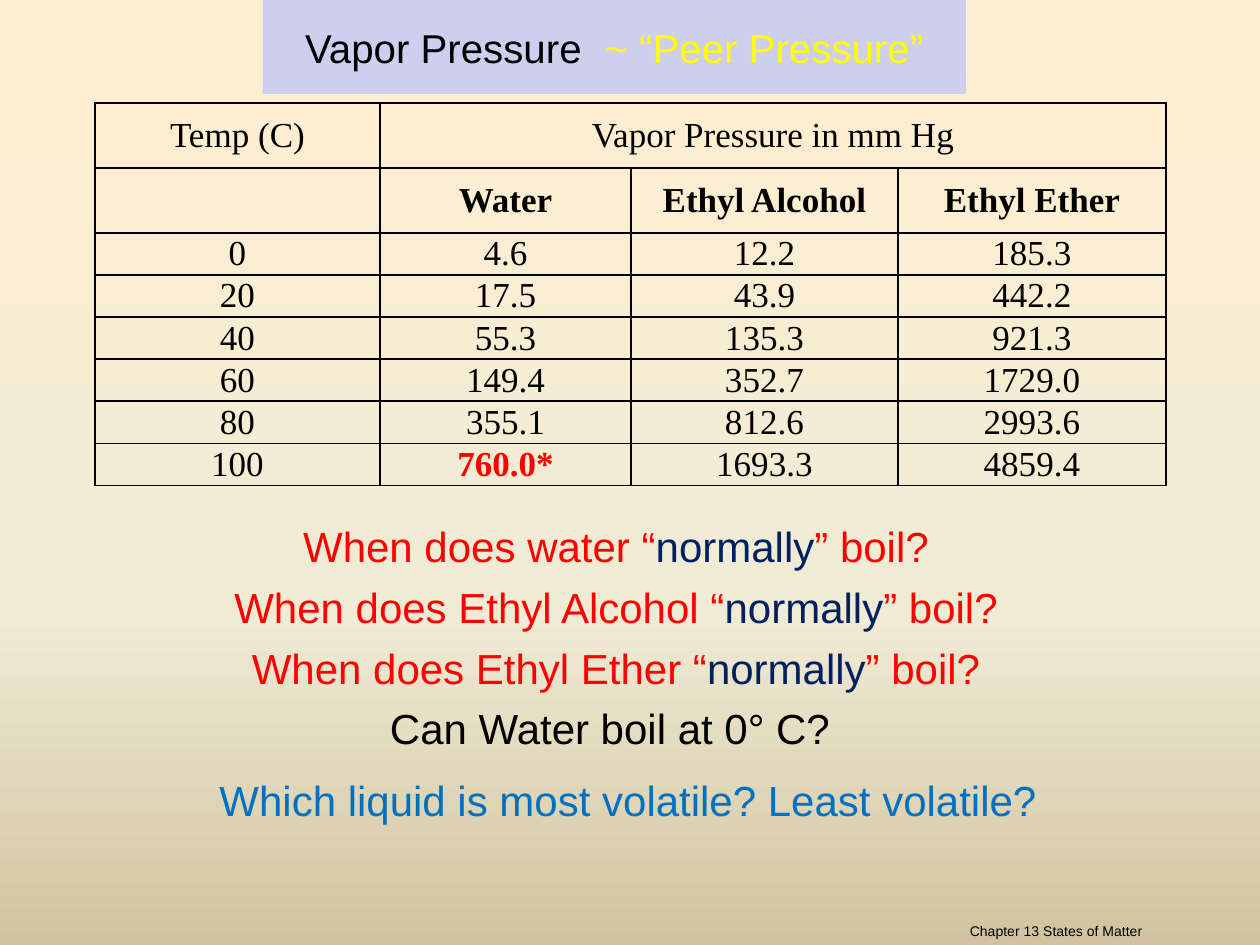
from copy import deepcopy
from lxml import etree
from pptx import Presentation
from pptx.dml.color import RGBColor
from pptx.enum.shapes import MSO_SHAPE
from pptx.enum.text import MSO_ANCHOR, PP_ALIGN
from pptx.oxml.ns import qn
from pptx.util import Emu, Pt

RECT = MSO_SHAPE.RECTANGLE
TOP, MID, LOW = MSO_ANCHOR.TOP, MSO_ANCHOR.MIDDLE, MSO_ANCHOR.BOTTOM
CENTER, RIGHT = PP_ALIGN.CENTER, PP_ALIGN.RIGHT
BLACK = RGBColor(0, 0, 0)
RED = RGBColor(0xFF, 0, 0)
NAVY = RGBColor(0, 0x20, 0x60)
BLUE = RGBColor(0, 0x70, 0xC0)
YELLOW = RGBColor(0xFF, 0xFF, 0)
LILAC = RGBColor(0xCE, 0xCE, 0xEF)
STOPS = [
    (0, RGBColor(0xFF, 0xEF, 0xD1)),
    (0.65, RGBColor(0xF0, 0xEB, 0xD5)),
    (1, RGBColor(0xD1, 0xC3, 0x9F)),
]
SANS, SERIF = "Arial", "Times New Roman"

COLS = [285, 251, 267, 268]
HEADS = [
    ["Temp (C)", "Vapor Pressure in mm Hg", "", ""],
    ["", "Water", "Ethyl Alcohol", "Ethyl Ether"],
]
DATA = [
    ["0", "4.6", "12.2", "185.3"],
    ["20", "17.5", "43.9", "442.2"],
    ["40", "55.3", "135.3", "921.3"],
    ["60", "149.4", "352.7", "1729.0"],
    ["80", "355.1", "812.6", "2993.6"],
    ["100", "760.0*", "1693.3", "4859.4"],
]
LIQUIDS = ["water", "Ethyl Alcohol", "Ethyl Ether"]


def px(n):
    return Emu(round(n * 914400 / 126))


def add_run(para, text, size, color, font=SANS, bold=False):
    run = para.add_run()
    run.text = text
    run.font.size = Pt(size)
    run.font.name = font
    run.font.bold = bold
    run.font.color.rgb = color


def add_box(slide, box, anchor):
    frame = slide.shapes.add_textbox(*map(px, box)).text_frame
    frame.word_wrap = True
    frame.vertical_anchor = anchor
    return frame


def paint_back(slide):
    fill = slide.background.fill
    fill.gradient()
    fill.gradient_angle = 270
    stops = fill.gradient_stops
    items = stops[0]._gs.getparent()
    items.append(deepcopy(items[-1]))
    for stop, (place, color) in zip(fill.gradient_stops, STOPS):
        stop.position = place
        stop.color.rgb = color


def add_title(slide, box):
    shape = slide.shapes.add_shape(RECT, *map(px, box))
    shape.shadow.inherit = False
    shape.fill.solid()
    shape.fill.fore_color.rgb = LILAC
    shape.line.fill.background()
    frame = shape.text_frame
    frame.word_wrap = True
    frame.vertical_anchor = MID
    para = frame.paragraphs[0]
    para.alignment = CENTER
    add_run(para, "Vapor Pressure  ", 23, BLACK)
    add_run(para, "~ “Peer Pressure”", 23, YELLOW)


def add_edges(cell):
    props = cell._tc.get_or_add_tcPr()
    for at, side in enumerate(("lnL", "lnR", "lnT", "lnB")):
        line = etree.Element(qn("a:" + side), w=str(Pt(1)))
        fill = etree.SubElement(line, qn("a:solidFill"))
        etree.SubElement(fill, qn("a:srgbClr"), val=str(BLACK))
        props.insert(at, line)


def add_grid(slide, box):
    rows = HEADS + DATA
    table = slide.shapes.add_table(len(rows), len(COLS), *map(px, box)).table
    table.first_row = table.horz_banding = False
    for col, width in zip(table.columns, COLS):
        col.width = px(width)
    for i, row in enumerate(rows):
        table.rows[i].height = px(65 if i < len(HEADS) else 33)
        for j, text in enumerate(row):
            cell = table.cell(i, j)
            cell.fill.background()
            cell.vertical_anchor = MID
            cell.margin_left = cell.margin_right = px(9)
            cell.margin_top = cell.margin_bottom = 0
            add_edges(cell)
            para = cell.text_frame.paragraphs[0]
            para.alignment = CENTER
            boil = text.endswith("*")
            if text:
                add_run(para, text, 20, RED if boil else BLACK, SERIF,
                        boil or i == 1)
    table.cell(0, 1).merge(table.cell(0, 3))


def add_asks(slide, box):
    asks = [
        (6, 24, [(f"When does {name} “", RED), ("normally", NAVY),
                 ("” boil?", RED)])
        for name in LIQUIDS
    ]
    asks.append((6, 36, [("Can Water boil at 0° C?", BLACK)]))
    asks.append((12, 0, [("Which liquid is most volatile? Least volatile?",
                          BLUE)]))
    frame = add_box(slide, box, TOP)
    for i, (gap, inset, runs) in enumerate(asks):
        para = frame.add_paragraph() if i else frame.paragraphs[0]
        para.alignment = CENTER
        if i:
            para.space_before = Pt(gap)
        para._p.get_or_add_pPr().set("marR", str(px(inset)))
        for text, color in runs:
            add_run(para, text, 24, color)


def add_foot(slide, box):
    para = add_box(slide, box, LOW).paragraphs[0]
    para.alignment = RIGHT
    add_run(para, "Chapter 13 States of Matter", 8, BLACK)


def main():
    deck = Presentation()
    deck.slide_width, deck.slide_height = px(1260), px(945)
    slide = deck.slides.add_slide(deck.slide_layouts[6])
    paint_back(slide)
    add_asks(slide, (14, 514, 1228, 401))
    add_foot(slide, (567, 903, 588, 42))
    add_title(slide, (263, 0, 703, 94))
    add_grid(slide, (95, 103, sum(COLS), 364))
    deck.save("out.pptx")


if __name__ == "__main__":
    main()
